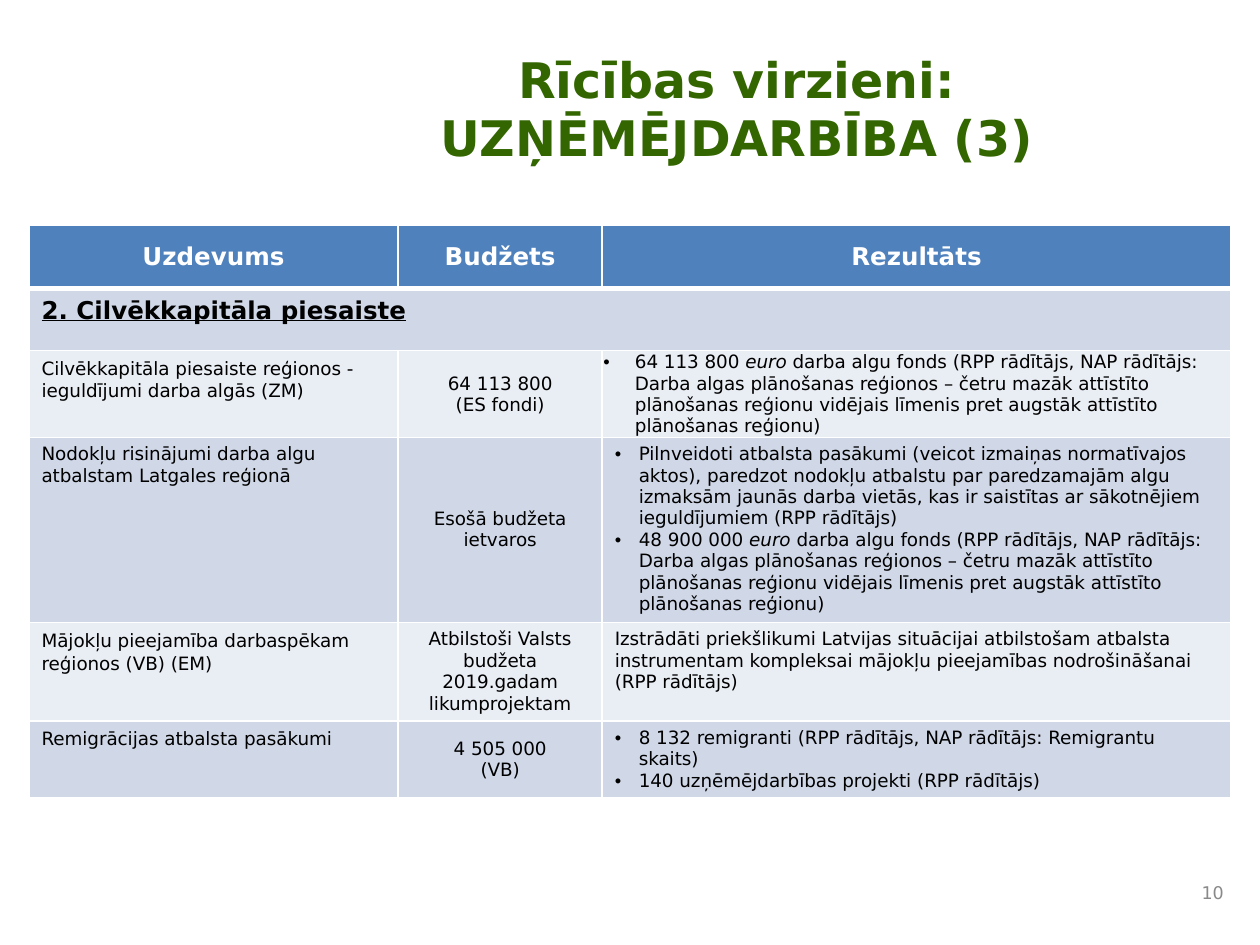
from lxml import etree
from pptx import Presentation
from pptx.dml.color import RGBColor
from pptx.enum.text import MSO_ANCHOR, PP_ALIGN
from pptx.oxml.ns import qn
from pptx.util import Inches, Pt

TOP, MIDDLE = MSO_ANCHOR.TOP, MSO_ANCHOR.MIDDLE
LEFT, CENTER, RIGHT = PP_ALIGN.LEFT, PP_ALIGN.CENTER, PP_ALIGN.RIGHT
FONT = "DejaVu Sans"
WHITE, BLACK, GREEN, GREY = "FFFFFF", "000000", "336600", "898989"
HEADER_FILL, BANDS = "4F81BD", ("D0D8E8", "E9EDF4")
WIDE_MARGINS, TIGHT_MARGINS = (0.1, 0.05, 0.1, 0.05), (0.01, 0.01, 0.01, 0)
COLUMN_WIDTHS = (2.93, 1.62, 4.99)
ROW_HEIGHTS = (0.5, 0.49, 0.69, 1.47, 0.78, 0.61)

HEADINGS = ("Uzdevums", "Budžets", "Rezultāts")
SECTION = "2. Cilvēkkapitāla piesaiste"


def wage_fund(amount):
    return [
        (amount + " ", False),
        ("euro", True),
        (" darba algu fonds (RPP rādītājs, NAP rādītājs: Darba algas plānošanas "
         "reģionos – četru mazāk attīstīto plānošanas reģionu vidējais līmenis "
         "pret augstāk attīstīto plānošanas reģionu)", False),
    ]


TASKS = (
    dict(task="Cilvēkkapitāla piesaiste reģionos - ieguldījumi darba algās (ZM)",
         budget=["64 113 800", "(ES fondi)"], budget_margins=TIGHT_MARGINS,
         results=[wage_fund("64 113 800")], indent=0.25,
         result_margins=TIGHT_MARGINS, result_anchor=MIDDLE),
    dict(task="Nodokļu risinājumi darba algu atbalstam Latgales reģionā",
         task_spacing=None, budget=["Esošā budžeta ietvaros"],
         results=["Pilnveidoti atbalsta pasākumi (veicot izmaiņas normatīvajos aktos), "
                  "paredzot nodokļu atbalstu par paredzamajām algu izmaksām jaunās darba "
                  "vietās, kas ir saistītas ar sākotnējiem ieguldījumiem (RPP rādītājs)",
                  wage_fund("48 900 000")], indent=0.19),
    dict(task="Mājokļu pieejamība darbaspēkam reģionos (VB) (EM)",
         budget=["Atbilstoši Valsts budžeta 2019.gadam likumprojektam"],
         results=["Izstrādāti priekšlikumi Latvijas situācijai atbilstošam atbalsta "
                  "instrumentam kompleksai mājokļu pieejamības nodrošināšanai "
                  "(RPP rādītājs)"]),
    dict(task="Remigrācijas atbalsta pasākumi",
         budget=["4 505 000", "(VB)"], budget_margins=TIGHT_MARGINS,
         results=["8 132 remigranti (RPP rādītājs, NAP rādītājs: Remigrantu skaits)",
                  "140 uzņēmējdarbības projekti (RPP rādītājs)"], indent=0.19),
)


def colour(value):
    return RGBColor.from_string(value)


def add_bullet(paragraph, indent):
    properties = paragraph._p.get_or_add_pPr()
    properties.set("marL", str(Inches(indent)))
    properties.set("indent", str(-Inches(indent)))
    etree.SubElement(properties, qn("a:buFont"), typeface="Arial")
    etree.SubElement(properties, qn("a:buChar"), char="•")


def add_run(paragraph, text, size, ink, bold=False, italic=False, underline=False):
    run = paragraph.add_run()
    run.text = text
    font = run.font
    font.name, font.size = FONT, Pt(size)
    font.bold, font.italic, font.underline = bold, italic, underline
    font.color.rgb = colour(ink)


def write(frame, paragraphs, size=10.5, ink=BLACK, align=LEFT, spacing=None,
          indent=0, **style):
    for index, content in enumerate(paragraphs):
        paragraph = frame.add_paragraph() if index else frame.paragraphs[0]
        if indent:
            add_bullet(paragraph, indent)
        paragraph.alignment = align
        if spacing:
            paragraph.line_spacing = spacing
        runs = [(content, False)] if isinstance(content, str) else content
        for text, italic in runs:
            add_run(paragraph, text, size, ink, italic=italic, **style)


def add_borders(cell, bottom):
    properties = cell._tc.get_or_add_tcPr()
    for side, width in (("L", 1), ("R", 1), ("T", 1), ("B", bottom)):
        line = etree.SubElement(properties, qn("a:ln" + side), w=str(Pt(width)))
        fill = etree.SubElement(line, qn("a:solidFill"))
        etree.SubElement(fill, qn("a:srgbClr"), val=WHITE)


def fill_cell(cell, fill, paragraphs, anchor=TOP, margins=WIDE_MARGINS,
              bottom=1, **style):
    add_borders(cell, bottom)
    cell.fill.solid()
    cell.fill.fore_color.rgb = colour(fill)
    cell.vertical_anchor = anchor
    (cell.margin_left, cell.margin_top,
     cell.margin_right, cell.margin_bottom) = map(Inches, margins)
    write(cell.text_frame, paragraphs, **style)


def fill_task(table, row, task):
    band = BANDS[(row + 1) % 2]
    fill_cell(table.cell(row, 0), band, [task["task"]],
              spacing=task.get("task_spacing", 1.07))
    fill_cell(table.cell(row, 1), band, task["budget"], anchor=MIDDLE, align=CENTER,
              margins=task.get("budget_margins", WIDE_MARGINS))
    fill_cell(table.cell(row, 2), band, task["results"], indent=task.get("indent", 0),
              anchor=task.get("result_anchor", TOP),
              margins=task.get("result_margins", WIDE_MARGINS))


def add_task_table(slide):
    table = slide.shapes.add_table(
        len(ROW_HEIGHTS), len(COLUMN_WIDTHS), Inches(0.23), Inches(1.79),
        Inches(sum(COLUMN_WIDTHS)), Inches(sum(ROW_HEIGHTS))).table
    for column, width in zip(table.columns, COLUMN_WIDTHS):
        column.width = Inches(width)
    for row, height in zip(table.rows, ROW_HEIGHTS):
        row.height = Inches(height)
    for column, heading in enumerate(HEADINGS):
        fill_cell(table.cell(0, column), HEADER_FILL, [heading], anchor=MIDDLE,
                  bottom=3, size=14, ink=WHITE, align=CENTER, bold=True)
    section = table.cell(1, 0)
    section.merge(table.cell(1, len(HEADINGS) - 1))
    fill_cell(section, BANDS[0], [SECTION], size=14, spacing=1.07,
              bold=True, underline=True)
    for row, task in enumerate(TASKS, start=2):
        fill_task(table, row, task)


def add_text(slide, box, anchor):
    frame = slide.shapes.add_textbox(*map(Inches, box)).text_frame
    frame.word_wrap = True
    frame.vertical_anchor = anchor
    return frame


def add_title(slide):
    frame = add_text(slide, (2.24, 0.34, 7.21, 0.91), TOP)
    write(frame, ["Rīcības virzieni:"], size=28, ink=GREEN, align=CENTER, bold=True)
    heading = frame.paragraphs[0]
    heading.add_line_break()
    add_run(heading, "UZŅĒMĒJDARBĪBA (3)", 28, GREEN, bold=True)


def add_page_number(slide):
    frame = add_text(slide, (9.33, 6.92, 0.48, 0.33), MIDDLE)
    write(frame, ["10"], size=10, ink=GREY, align=RIGHT)


def main():
    deck = Presentation()
    deck.slide_width, deck.slide_height = Inches(10), Inches(7.5)
    slide = deck.slides.add_slide(deck.slide_layouts[6])
    add_task_table(slide)
    add_title(slide)
    add_page_number(slide)
    deck.save("out.pptx")


if __name__ == "__main__":
    main()
